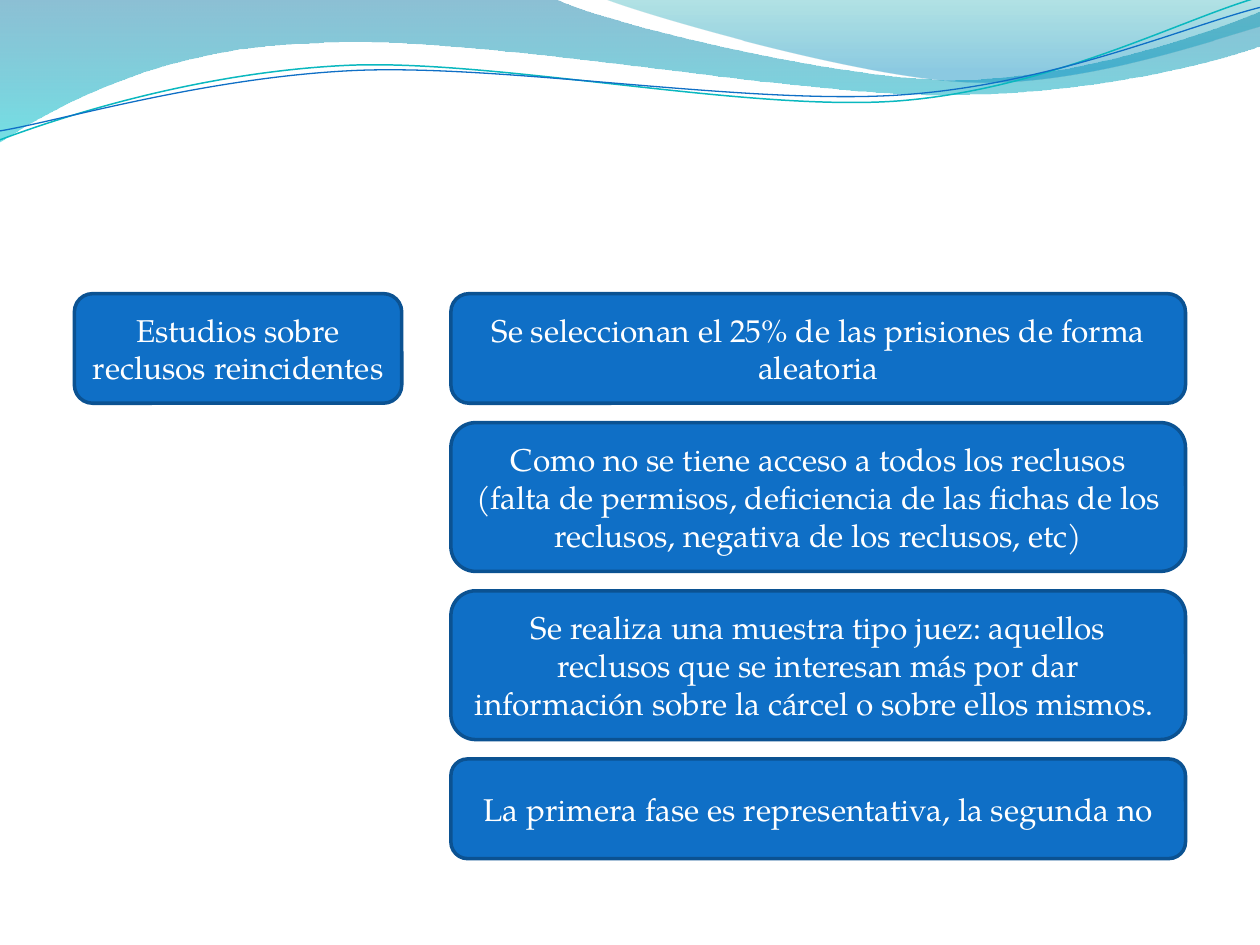
from lxml.etree import SubElement
from pptx import Presentation
from pptx.dml.color import RGBColor
from pptx.enum.shapes import MSO_SHAPE
from pptx.enum.text import MSO_ANCHOR, PP_ALIGN
from pptx.oxml.ns import qn
from pptx.util import Cm, Pt

COLORS = {
    "box": "0F6FC6", "border": "0B5292", "text": "FFFFFF",
    "teal_line": "0AB8BF", "blue_line": "0F6FC6",
    "wave_top": "0074A1", "wave_bottom": "00C6CF",
    "corner_top": "00A1A9", "corner_bottom": "008BBF",
}
FONT = {"name": "TeX Gyre Pagella", "size": Pt(18)}
LINE_ROTATION = 357.3

# Outlines in cm: a start, then one point for a line or three for a Bezier curve
WAVE = [
    (0, 0),
    [(11.18, -0.03)],
    [(12.09, 0.43), (16.87, 1.6), (19.25, 1.6)],
    [(21.67, 1.6), (24.33, 0.66), (25.4, 0.23)],
    [(25.43, 0.91)],
    [(24.97, 1.12), (22.1, 1.93), (18.95, 1.91)],
    [(15.8, 1.91), (9.7, 0.71), (6.53, 0.86)],
    [(3.28, 0.91), (1.17, 2.11), (-0.03, 2.87)],
    [(0, 0)],
]
CORNER = [
    (12.17, -0.03),
    [(12.93, 0.28), (17.32, 1.57), (19.53, 1.65)],
    [(21.74, 1.75), (24.41, 0.81), (25.4, 0.53)],
    [(25.4, 0)],
    [(12.17, -0.03)],
]
TEAL_LINE = [
    (-0.05, 2.22),
    [(1.19, 1.82), (4.02, 1.04), (7.06, 1.05)],
    [(10.04, 1.07), (15.02, 2.37), (18.07, 2.29)],
    [(21.13, 2.2), (23.87, 0.91), (25.41, 0.55)],
]
BLUE_LINE = [
    (-0.04, 2.04),
    [(1.16, 1.9), (4.18, 1.15), (7.2, 1.16)],
    [(10.25, 1.18), (15.13, 2.25), (18.18, 2.17)],
    [(21.21, 2.1), (23.93, 1.06), (25.45, 0.75)],
]

# Boxes: sizes in cm
TOP, GAP = 5.92, 0.39
TOPIC = "Estudios sobre reclusos reincidentes"
STEPS = [
    ("Se seleccionan el 25% de las prisiones de forma aleatoria", 2.21),
    ("Como no se tiene acceso a todos los reclusos (falta de permisos, "
     "deficiencia de las fichas de los reclusos, negativa de los reclusos, etc)", 3),
    ("Se realiza una muestra tipo juez: aquellos reclusos que se interesan más "
     "por dar información sobre la cárcel o sobre ellos mismos. ", 3),
    ("La primera fase es representativa, la segunda no", 2.01),
]


def color(name):
    return RGBColor.from_string(COLORS[name])


def add_outline(shapes, outline, close):
    """Build a freeform through all points, then join triples into Bezier curves."""
    start, *segments = outline
    builder = shapes.build_freeform(Cm(start[0]), Cm(start[1]))
    builder.add_line_segments([(Cm(x), Cm(y)) for segment in segments for x, y in segment],
                              close=close)
    shape = builder.convert_to_shape()
    shape.shadow.inherit = False
    lines = iter(list(shape._element.spPr.iter(qn("a:lnTo"))))
    for segment in segments:
        first = next(lines)
        if len(segment) == 3:
            curve = first.makeelement(qn("a:cubicBezTo"))
            first.addprevious(curve)
            for line in (first, next(lines), next(lines)):
                curve.append(line[0])
                line.getparent().remove(line)
    return shape


def add_gradient_wave(shapes, outline, stops):
    """Each stop is a colour name, a position from 0 to 1 and an opacity in percent."""
    shape = add_outline(shapes, outline, close=True)
    shape.line.fill.background()
    shape.fill.gradient()
    shape.fill.gradient_angle = 270
    for stop, (name, position, _) in zip(shape.fill.gradient_stops, stops):
        stop.color.rgb = color(name)
        stop.position = position
    for element, (_, _, opacity) in zip(shape._element.spPr.iter(qn("a:srgbClr")), stops):
        SubElement(element, qn("a:alpha"), val=str(opacity * 1000))


def add_curve(shapes, outline, name, width):
    shape = add_outline(shapes, outline, close=False)
    shape.rotation = LINE_ROTATION
    shape.fill.background()
    shape.line.color.rgb = color(name)
    shape.line.width = Pt(width)


def add_box(shapes, text, left, top, width, height):
    shape = shapes.add_shape(MSO_SHAPE.ROUNDED_RECTANGLE,
                             Cm(left), Cm(top), Cm(width), Cm(height))
    shape.shadow.inherit = False
    shape.fill.solid()
    shape.fill.fore_color.rgb = color("box")
    shape.line.color.rgb = color("border")
    shape.line.width = Pt(2)
    frame = shape.text_frame
    frame.word_wrap = True
    frame.vertical_anchor = MSO_ANCHOR.MIDDLE
    paragraph = frame.paragraphs[0]
    paragraph.alignment = PP_ALIGN.CENTER
    run = paragraph.add_run()
    run.text = text
    for attribute, value in FONT.items():
        setattr(run.font, attribute, value)
    run.font.color.rgb = color("text")


def main():
    presentation = Presentation()
    presentation.slide_width, presentation.slide_height = Cm(25.4), Cm(19.05)
    slide = presentation.slides.add_slide(presentation.slide_layouts[6])
    shapes = slide.shapes

    # Waves along the top edge
    add_gradient_wave(shapes, WAVE, [("wave_top", 0, 45), ("wave_bottom", 1, 55)])
    add_gradient_wave(shapes, CORNER, [("corner_top", 0, 30), ("corner_bottom", 0.8, 45)])

    # Pair of thin lines
    line_group = shapes.add_group_shape()
    add_curve(line_group.shapes, TEAL_LINE, "teal_line", 0.85)
    add_curve(line_group.shapes, BLUE_LINE, "blue_line", 0.75)

    # Topic on the left, steps stacked on the right
    add_box(shapes, TOPIC, 1.5, TOP, 6.6, STEPS[0][1])
    top = TOP
    for text, height in STEPS:
        add_box(shapes, text, 9.09, top, 14.81, height)
        top += height + GAP

    presentation.save("out.pptx")


if __name__ == "__main__":
    main()
